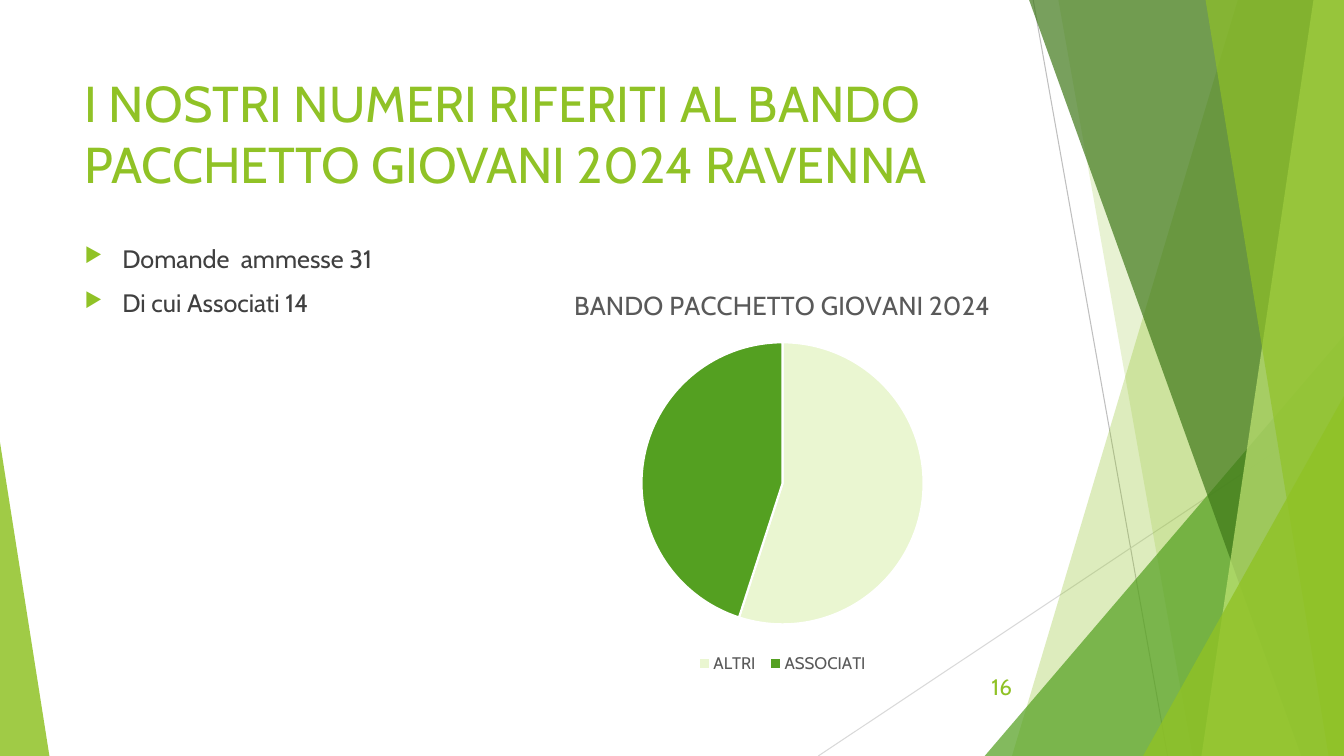
from lxml.etree import SubElement
from pptx import Presentation
from pptx.chart.data import CategoryChartData
from pptx.dml.color import RGBColor
from pptx.enum.chart import XL_CHART_TYPE as CT, XL_LEGEND_POSITION as LP
from pptx.enum.shapes import MSO_CONNECTOR as MC, MSO_SHAPE as MS
from pptx.enum.text import MSO_ANCHOR as MA, MSO_AUTO_SIZE as AS, PP_ALIGN as PA
from pptx.oxml import parse_xml
from pptx.oxml.ns import nsdecls, qn
from pptx.util import Pt

FONT = "Cabin"
WHITE = RGBColor(0xFF, 0xFF, 0xFF)
LIME = RGBColor(0x90, 0xC2, 0x26)
GREEN = RGBColor(0x54, 0xA0, 0x21)
FOREST = RGBColor(0x3F, 0x78, 0x19)
PALE = RGBColor(0xC0, 0xE4, 0x74)
MINT = RGBColor(0xEA, 0xF6, 0xD1)
TEXT = RGBColor(0x40, 0x40, 0x40)
CHART_TEXT = RGBColor(0x59, 0x59, 0x59)
GREY = RGBColor(0xBF, 0xBF, 0xBF)
LIGHT_GREY = RGBColor(0xD9, 0xD9, 0xD9)
W, H = 960, 540


def style(font, size, color):
    font.name, font.size, font.bold = FONT, Pt(size), False
    font.color.rgb = color


def paint(sp, color, opacity):
    sp.shadow.inherit = False
    sp.line.fill.background()
    sp.fill.solid()
    sp.fill.fore_color.rgb = color
    clr = sp.fill._xPr.find(qn("a:solidFill"))[0]
    SubElement(clr, qn("a:alpha")).set("val", str(opacity * 1000))


prs = Presentation()
prs.slide_width, prs.slide_height = Pt(W), Pt(H)
s = prs.slides.add_slide(prs.slide_layouts[5])
shapes = s.shapes

# Thin background lines
for x1, y1, x2, y2, color in [(738, 0, 834, H, GREY),
                              (W, 290, 584.5, H, LIGHT_GREY)]:
    c = shapes.add_connector(MC.STRAIGHT, Pt(x1), Pt(y1), Pt(x2), Pt(y2))
    c.line.color.rgb, c.line.width = color, Pt(0.75)
    SubElement(c._element.spPr, qn("a:effectLst"))

# Green facets: bands (top x, bottom x) reach the right edge,
# triangles (left, top, width, apex) stand on the bottom edge
facets = [
    ((884.2, 722.9), LIME, 30),
    ((756, 851.8), LIME, 20),
    ((703.4, 239.8, 256.6, 1), GREEN, 72),
    ((735.1, 929.5), FOREST, 70),
    ((938.2, 858.2), PALE, 70),
    ((861.1, 949), LIME, 65),
    ((816.5, 283, 143.5, 1), LIME, 80),
    ((0, 316, 35.3, 0), LIME, 85),
]
for geometry, color, opacity in facets:
    if len(geometry) == 2:
        top_x, bottom_x = geometry
        band = shapes.build_freeform(Pt(top_x), 0)
        band.add_line_segments([(Pt(W), 0), (Pt(W), Pt(H)), (Pt(bottom_x), Pt(H))])
        sp = band.convert_to_shape()
    else:
        x, y, w, apex = geometry
        sp = shapes.add_shape(MS.ISOSCELES_TRIANGLE, Pt(x), Pt(y), Pt(w), Pt(H - y))
        sp.adjustments[0] = apex
    paint(sp, color, opacity)

# Title
title = shapes.title
title.left, title.top, title.width, title.height = Pt(53.3), Pt(48), Pt(677), Pt(104)
tf = title.text_frame
tf.text = "I NOSTRI NUMERI RIFERITI AL BANDO PACCHETTO GIOVANI 2024 RAVENNA"
tf.word_wrap, tf.auto_size, tf.vertical_anchor = True, AS.NONE, MA.TOP
p = tf.paragraphs[0]
p.alignment = PA.LEFT
style(p.runs[0].font, 36, LIME)

# Bulleted figures
tf = shapes.add_textbox(Pt(53.3), Pt(170), Pt(677), Pt(305)).text_frame
tf.word_wrap = True
tf.text = "Domande  ammesse 31\nDi cui Associati 14"
for p in tf.paragraphs:
    p.space_before = Pt(10)
    style(p.runs[0].font, 18, TEXT)
    pPr = p._p.get_or_add_pPr()
    pPr.set("marL", str(Pt(27)))
    pPr.set("indent", str(Pt(-27)))
    bullet_color = SubElement(pPr, qn("a:buClr"))
    SubElement(bullet_color, qn("a:srgbClr")).set("val", str(LIME))
    SubElement(pPr, qn("a:buSzPct")).set("val", "80000")
    SubElement(pPr, qn("a:buChar")).set("char", "▶")

# Pie chart
data = CategoryChartData()
data.categories = ["ALTRI ", "ASSOCIATI"]
data.add_series("BANDO PACCHETTO GIOVANI 2024", (55, 45))
chart = shapes.add_chart(CT.PIE, Pt(318), Pt(192), Pt(482), Pt(292), data).chart
style(chart.font, 10, CHART_TEXT)
chart.has_title = True
tf = chart.chart_title.text_frame
tf.text = "BANDO PACCHETTO GIOVANI 2024"
style(tf.paragraphs[0].runs[0].font, 18.6, CHART_TEXT)
chart.chart_title.include_in_layout = False
chart.has_legend = True
chart.legend.position = LP.BOTTOM
chart.legend.include_in_layout = False
style(chart.legend.font, 12, CHART_TEXT)
plot = chart.plots[0]
plot.vary_by_categories = True
for i, color in enumerate([MINT, GREEN]):
    fmt = plot.series[0].points[i].format
    fmt.fill.solid()
    fmt.fill.fore_color.rgb = color
    fmt.line.color.rgb, fmt.line.width = WHITE, Pt(1.5)

# Pie position as fractions of the chart area
area = chart._chartSpace.chart.plotArea
for old in area.findall(qn("c:layout")):
    area.remove(old)
box = "".join(f'<c:{k} val="{v}"/>' for k, v in [
    ("layoutTarget", "inner"), ("xMode", "edge"), ("yMode", "edge"),
    ("x", 0.29), ("y", 0.18), ("w", 0.42), ("h", 0.69)])
area.insert(0, parse_xml(
    f'<c:layout {nsdecls("c")}><c:manualLayout>{box}</c:manualLayout></c:layout>'))

# Slide number
tf = shapes.add_textbox(Pt(676), Pt(476), Pt(54), Pt(29)).text_frame
tf.word_wrap, tf.vertical_anchor = True, MA.MIDDLE
tf.text = "16"
p = tf.paragraphs[0]
p.alignment = PA.RIGHT
style(p.runs[0].font, 16, LIME)

prs.save("out.pptx")
